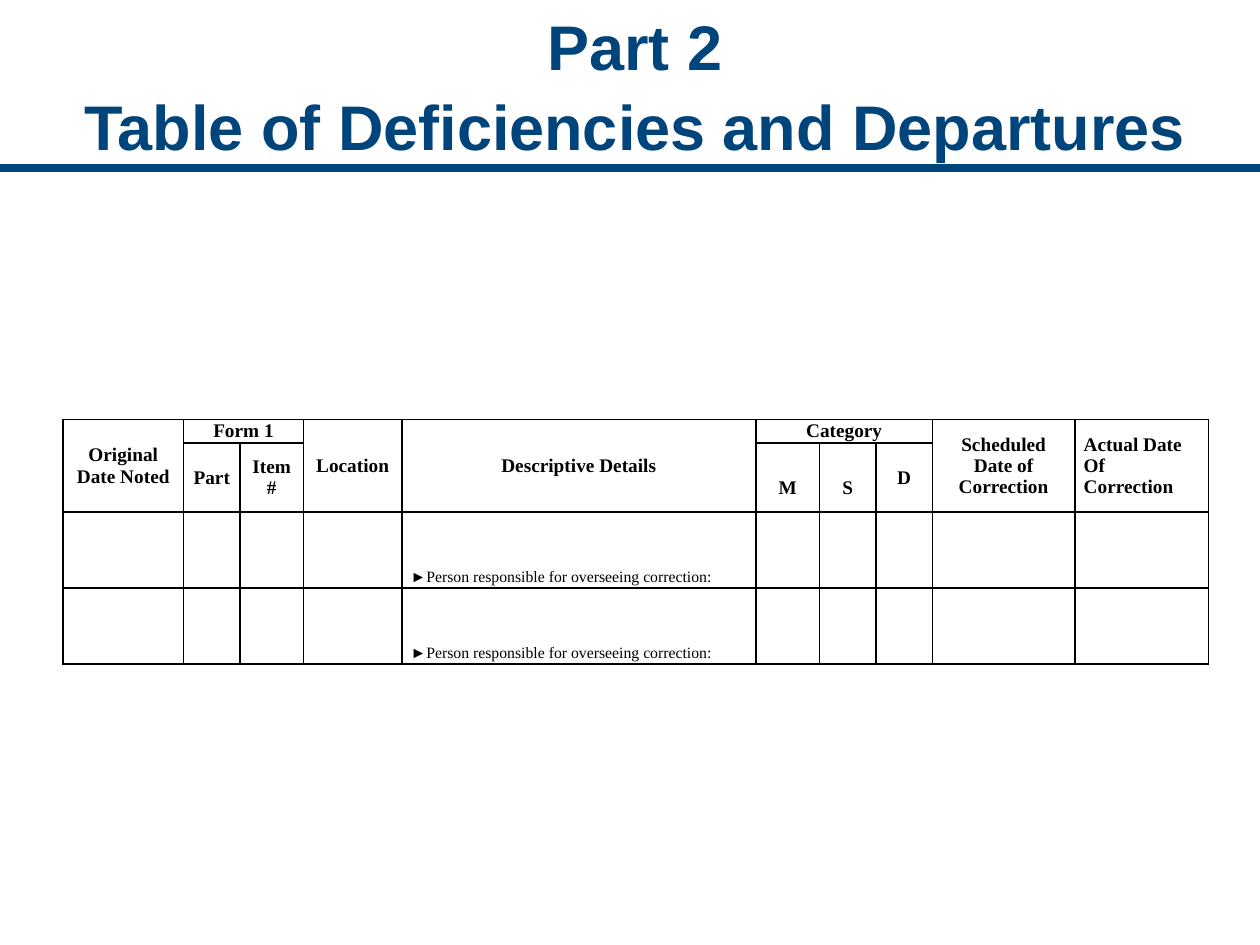
from lxml.etree import SubElement
from pptx import Presentation
from pptx.dml.color import RGBColor
from pptx.enum.shapes import MSO_CONNECTOR
from pptx.enum.text import MSO_ANCHOR, PP_ALIGN
from pptx.oxml.ns import qn
from pptx.util import Cm, Pt

HUES = {"navy": "00447C", "black": "000000", "white": "FFFFFF"}
COLS = [2.43, 1.14, 1.28, 1.98, 7.14, 1.28, 1.14, 1.14, 2.87, 2.69]
ROWS = [0.46, 1.3, 1.53, 1.53]
SPANS = [(0, 0, 1, 0), (0, 1, 0, 2), (0, 3, 1, 3), (0, 4, 1, 4),
         (0, 5, 0, 7), (0, 8, 1, 8), (0, 9, 1, 9)]
HEADS = {
    (0, 0): "Original\nDate Noted",
    (0, 1): "Form 1",
    (0, 3): "Location",
    (0, 4): "Descriptive Details",
    (0, 5): "Category",
    (0, 8): "Scheduled Date of Correction",
    (0, 9): "Actual Date\nOf Correction",
    (1, 1): "Part",
    (1, 2): "Item #",
    (1, 5): "M",
    (1, 6): "S",
    (1, 7): "D",
}
LOWER = ("M", "S")
NOTE = "►Person responsible for overseeing correction:"


def tint(name):
    return RGBColor.from_string(HUES[name])


class Sheet:
    title = "Arial"
    body = "Times New Roman"

    def __init__(self, slide):
        self.slide = slide

    def style(self, frame, font, size, hue, bold, align):
        for para in frame.paragraphs:
            para.alignment = align
            for run in para.runs:
                run.font.name = font
                run.font.size = Pt(size)
                run.font.bold = bold
                run.font.color.rgb = tint(hue)

    def rule(self, left, right, top, width):
        line = self.slide.shapes.add_connector(
            MSO_CONNECTOR.STRAIGHT, Cm(left), Cm(top), Cm(right), Cm(top))
        line.line.color.rgb = tint("navy")
        line.line.width = Pt(width)
        SubElement(line._element.spPr, qn("a:effectLst"))

    def head(self, text, left, top, width, height):
        box = self.slide.shapes.add_textbox(
            Cm(left), Cm(top), Cm(width), Cm(height))
        frame = box.text_frame
        frame.word_wrap = True
        frame.vertical_anchor = MSO_ANCHOR.MIDDLE
        frame.text = text
        self.style(frame, self.title, 36, "navy", True, PP_ALIGN.CENTER)
        frame.paragraphs[0].line_spacing = 1.05

    def grid(self, left, top):
        shape = self.slide.shapes.add_table(
            len(ROWS), len(COLS), Cm(left), Cm(top),
            Cm(sum(COLS)), Cm(sum(ROWS)))
        table = shape.table
        table.first_row = table.horz_banding = False
        for col, width in zip(table.columns, COLS):
            col.width = Cm(width)
        for row, height in zip(table.rows, ROWS):
            row.height = Cm(height)
        for r1, c1, r2, c2 in SPANS:
            table.cell(r1, c1).merge(table.cell(r2, c2))
        for row in range(len(ROWS)):
            for col in range(len(COLS)):
                self.cell(table.cell(row, col))
        return table

    def cell(self, cell):
        cell.margin_left = cell.margin_right = Cm(0.18)
        cell.margin_top = cell.margin_bottom = 0
        cell.vertical_anchor = MSO_ANCHOR.MIDDLE
        props = cell._tc.get_or_add_tcPr()
        for side in ("lnL", "lnR", "lnT", "lnB"):
            edge = SubElement(props, qn(f"a:{side}"), w=str(Pt(1)))
            fill = SubElement(edge, qn("a:solidFill"))
            SubElement(fill, qn("a:srgbClr"), val=HUES["black"])
        cell.fill.solid()
        cell.fill.fore_color.rgb = tint("white")
        para = cell.text_frame.paragraphs[0]
        SubElement(para._p, qn("a:endParaRPr"), sz="900")

    def fill(self, cell, text, size, bold, align):
        cell.text_frame.text = text
        self.style(cell.text_frame, self.body, size, "black", bold, align)


def main():
    deck = Presentation()
    deck.slide_width, deck.slide_height = Cm(25.4), Cm(19.05)
    sheet = Sheet(deck.slides.add_slide(deck.slide_layouts[6]))
    sheet.rule(0, 25.4, 3.38, 4.5)
    sheet.head("Part 2\vTable of Deficiencies and Departures",
               1.27, 0.2, 23.06, 2.97)
    table = sheet.grid(1.27, 8.46)
    for (row, col), text in HEADS.items():
        last = col == len(COLS) - 1
        align = PP_ALIGN.LEFT if last else PP_ALIGN.CENTER
        cell = table.cell(row, col)
        sheet.fill(cell, text, 11, True, align)
        if text in LOWER:
            cell.margin_top = Cm(0.43)
    for row in (2, 3):
        cell = table.cell(row, 4)
        sheet.fill(cell, NOTE, 9, False, PP_ALIGN.LEFT)
        cell.vertical_anchor = MSO_ANCHOR.BOTTOM
        cell.margin_bottom = Cm(0.05)
    deck.save("out.pptx")


if __name__ == "__main__":
    main()
